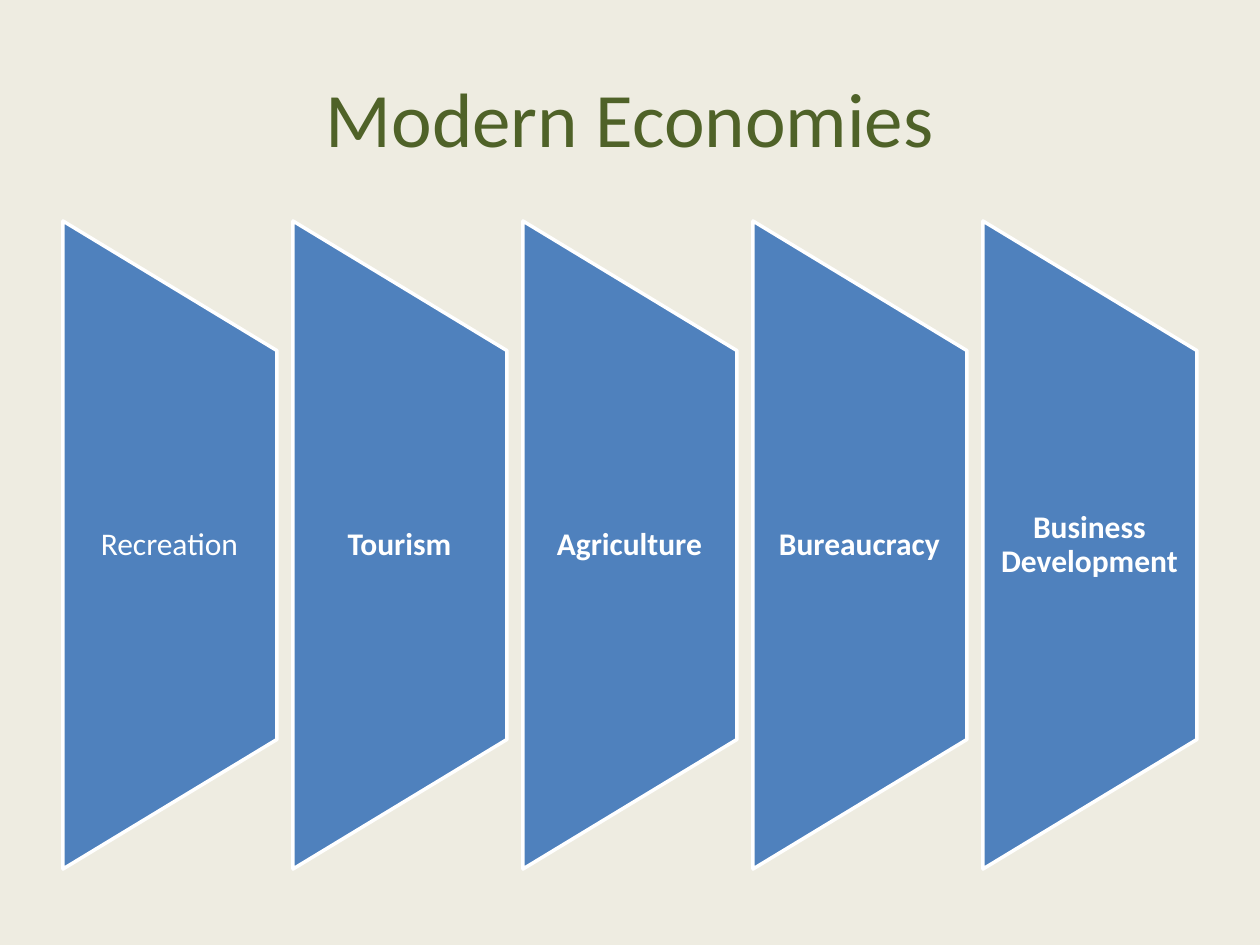
from dataclasses import dataclass

from pptx import Presentation
from pptx.dml.color import RGBColor
from pptx.enum.shapes import MSO_SHAPE
from pptx.enum.text import MSO_ANCHOR, PP_ALIGN
from pptx.util import Emu, Pt

PANEL = MSO_SHAPE.FLOWCHART_MANUAL_OPERATION
MIDDLE = MSO_ANCHOR.MIDDLE
CENTER = PP_ALIGN.CENTER
SCALE = 914400 / 126  # EMU in one px


@dataclass(frozen=True)
class Theme:
    back: str = "EEECE1"
    title: str = "4F6228"
    fill: str = "4F81BD"
    light: str = "FFFFFF"
    font: str = "Calibri"
    head: int = 44
    body: int = 18
    edge: int = 2


@dataclass(frozen=True)
class Box:
    left: int
    top: int
    width: int
    height: int

    def place(self) -> list[Emu]:
        return [px(n) for n in (self.left, self.top, self.width, self.height)]


@dataclass(frozen=True)
class Sector:
    label: str
    bold: bool = True


THEME = Theme()
TITLE = Box(63, 38, 1134, 157)
FIRST = Box(63, 221, 214, 648)  # leftmost panel as seen, after turning
STEP = 230
INSET = 130  # from panel top to label top
SECTORS = (
    Sector("Recreation", bold=False),
    Sector("Tourism"),
    Sector("Agriculture"),
    Sector("Bureaucracy"),
    Sector("Business Development"),
)


def px(count: int) -> Emu:
    return Emu(round(count * SCALE))


def color(code: str) -> RGBColor:
    return RGBColor.from_string(code)


def apply(target, values: dict) -> None:
    for name, value in values.items():
        setattr(target, name, value)


def write(slide, box: Box, text: str, font: dict, tone: str,
          sides: tuple[int, int], para: dict) -> None:
    frame = slide.shapes.add_textbox(*box.place()).text_frame
    apply(frame, {
        "word_wrap": True, "vertical_anchor": MIDDLE,
        "margin_left": px(sides[0]), "margin_right": px(sides[1]),
        "margin_top": 0, "margin_bottom": 0,
    })
    line = frame.paragraphs[0]
    apply(line, {"alignment": CENTER, **para})
    run = line.add_run()
    run.text = text
    apply(run.font, {"name": THEME.font, **font})
    run.font.color.rgb = color(tone)


def draw(slide, sector: Sector, index: int) -> None:
    left = FIRST.left + index * STEP
    # The panel lies flat around the same centre before its quarter turn
    shift = (FIRST.height - FIRST.width) // 2
    flat = Box(left - shift, FIRST.top + shift, FIRST.height, FIRST.width)
    panel = slide.shapes.add_shape(PANEL, *flat.place())
    panel.rotation = 270
    panel.shadow.inherit = False
    panel.fill.solid()
    panel.fill.fore_color.rgb = color(THEME.fill)
    panel.line.color.rgb = color(THEME.light)
    panel.line.width = Pt(THEME.edge)
    # Upright label over the panel
    area = Box(left, FIRST.top + INSET, FIRST.width, FIRST.height - 2 * INSET)
    write(slide, area, sector.label,
          {"size": Pt(THEME.body), "bold": sector.bold}, THEME.light,
          (15, 16), {"line_spacing": 0.9, "space_after": Pt(6.3)})


def main() -> None:
    deck = Presentation()
    apply(deck, {"slide_width": px(1260), "slide_height": px(945)})
    slide = deck.slides.add_slide(deck.slide_layouts[6])
    # Background
    back = slide.background.fill
    back.solid()
    back.fore_color.rgb = color(THEME.back)
    # Title
    write(slide, TITLE, "Modern Economies", {"size": Pt(THEME.head)},
          THEME.title, (13, 13), {})
    # Row of sectors
    for index, sector in enumerate(SECTORS):
        draw(slide, sector, index)
    deck.save("out.pptx")


if __name__ == "__main__":
    main()
